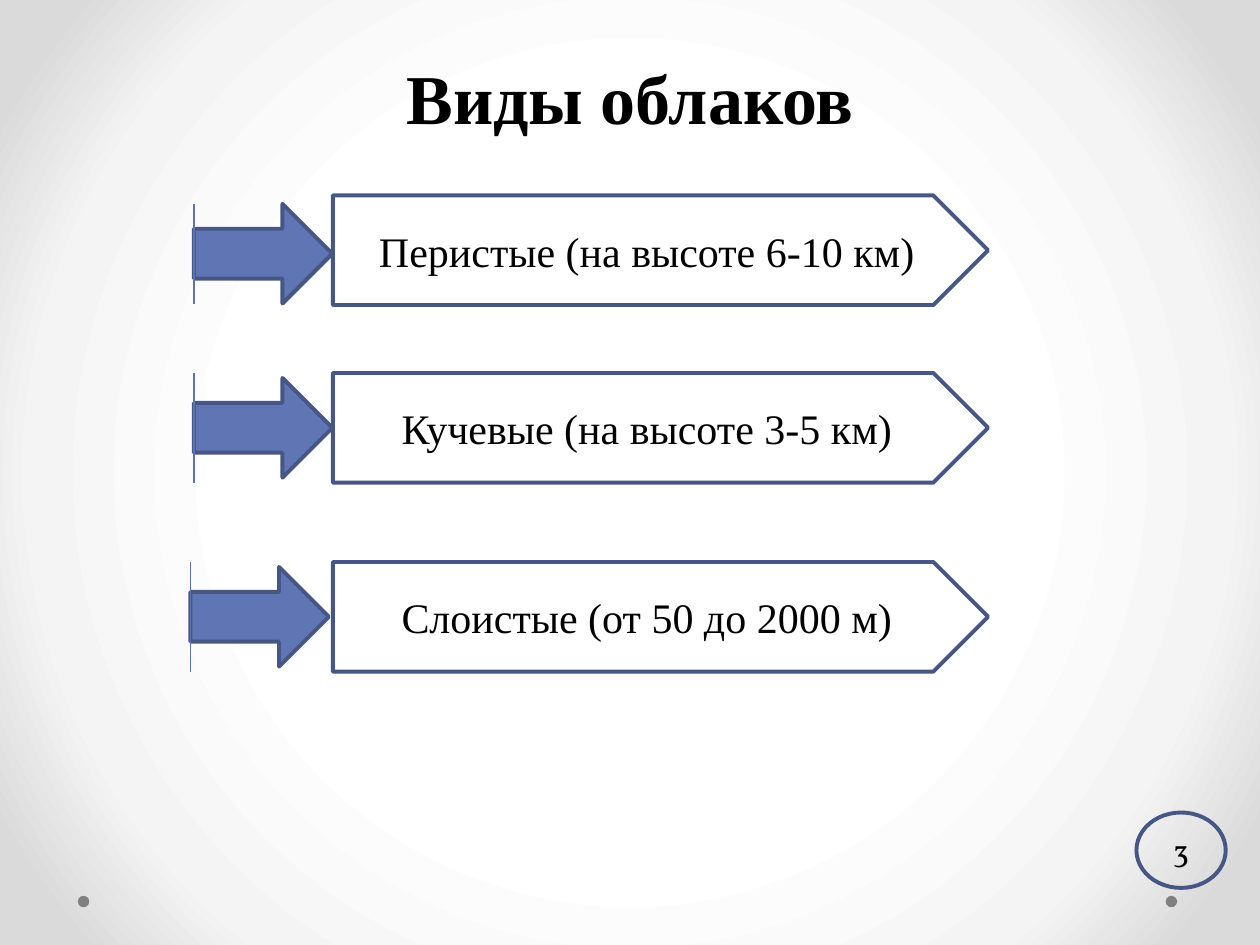
from lxml import etree
from pptx import Presentation
from pptx.dml.color import RGBColor
from pptx.enum.shapes import MSO_CONNECTOR, MSO_SHAPE
from pptx.enum.text import MSO_ANCHOR, PP_ALIGN
from pptx.oxml import parse_xml
from pptx.oxml.ns import nsdecls, qn
from pptx.util import Cm, Pt

BLACK = RGBColor(0x00, 0x00, 0x00)
GREY = RGBColor(0x80, 0x80, 0x80)
BLUE = RGBColor(0x60, 0x76, 0xB4)
OUTLINE = RGBColor(0x47, 0x57, 0x85)
RULE = RGBColor(0x5C, 0x72, 0xB2)
OVAL, ARROW, PENTAGON = MSO_SHAPE.OVAL, MSO_SHAPE.RIGHT_ARROW, MSO_SHAPE.PENTAGON
STRAIGHT = MSO_CONNECTOR.STRAIGHT
CENTER, MIDDLE, BOTTOM = PP_ALIGN.CENTER, MSO_ANCHOR.MIDDLE, MSO_ANCHOR.BOTTOM
SERIF = "Times New Roman"
STOPS = [(50, "FFFFFF"), (76, "F4F4F4"), (92, "DADADA")]
LABEL_LEFT, LABEL_WIDTH, LABEL_HEIGHT = 6.71, 13.21, 2.21
ARROW_WIDTH, ARROW_HEIGHT = 2.79, 2.01
CLOUDS = [
    ("Перистые (на высоте 6-10 км)", 3.91, 3.94, 0.17, 0.17, 2.01),
    ("Кучевые (на высоте 3-5 км)", 3.91, 7.52, 0.1, 0, LABEL_HEIGHT),
    ("Слоистые (от 50 до 2000 м)", 3.84, 11.33, 0.1, 0, LABEL_HEIGHT),
]


def paint_background(page):
    """Fill the page with a gradient that spreads from its centre."""
    page.background.fill.gradient()
    gradient = page.element.find(".//" + qn("a:gradFill"))
    stops = "".join(
        f'<a:gs pos="{place * 1000}"><a:srgbClr val="{colour}"/></a:gs>'
        for place, colour in STOPS
    )
    gradient.getparent().replace(gradient, parse_xml(
        f'<a:gradFill {nsdecls("a")} rotWithShape="1"><a:gsLst>{stops}</a:gsLst>'
        '<a:path path="circle"><a:fillToRect l="50000" t="50000" r="50000" b="50000"/>'
        "</a:path></a:gradFill>"))


def write(shape, text, size, font, anchor=MIDDLE):
    """Write one centred black paragraph in a shape and return it."""
    frame = shape.text_frame
    frame.word_wrap = True
    frame.vertical_anchor = anchor
    para = frame.paragraphs[0]
    para.text = text
    para.alignment = CENTER
    para.font.size = Pt(size)
    para.font.name = font
    para.font.color.rgb = BLACK
    return para


def add_preset(page, kind, left, top, width, height, fill=None, outline=OUTLINE):
    """Add a preset shape with an optional fill and outline."""
    shape = page.shapes.add_shape(kind, Cm(left), Cm(top), Cm(width), Cm(height))
    shape.shadow.inherit = False
    if fill is None:
        shape.fill.background()
    else:
        shape.fill.solid()
        shape.fill.fore_color.rgb = fill
    if outline is None:
        shape.line.fill.background()
    else:
        shape.line.color.rgb = outline
        shape.line.width = Pt(2.25)
    return shape


def add_title(page, text, left, top, width, height):
    """Place and format the title placeholder."""
    title = page.shapes.title
    title.left, title.top, title.width, title.height = map(Cm, (left, top, width, height))
    para = write(title, text, 40, SERIF, BOTTOM)
    para.font.bold = True
    para.line_spacing = Pt(58)


def add_rule(page, left, top, height):
    """Draw a thin vertical line."""
    rule = page.shapes.add_connector(STRAIGHT, Cm(left), Cm(top), Cm(left), Cm(top + height))
    rule.line.color.rgb = RULE
    rule.line.width = Pt(0.75)
    etree.SubElement(rule.element.spPr, qn("a:effectLst"))


def add_cloud_row(page, text, left, top, arrow_drop, rule_drop, rule_height):
    """Draw a cloud type: its label, the arrow to it and the rule behind the arrow."""
    label = add_preset(page, PENTAGON, LABEL_LEFT, top, LABEL_WIDTH, LABEL_HEIGHT)
    write(label, text, 24, SERIF)
    add_preset(page, ARROW, left, top + arrow_drop, ARROW_WIDTH, ARROW_HEIGHT, BLUE)
    add_rule(page, left, top + rule_drop, rule_height)


def add_footer(page, number, top):
    """Draw the two footer dots and the circled page number."""
    for left in (23.5, 1.57):
        add_preset(page, OVAL, left, top + 1.68, 0.23, 0.23, GREY, None)
    badge = add_preset(page, OVAL, 22.91, top, 1.8, 1.52)
    write(badge, number, 18, "Vollkorn")


def main():
    """Build and save the deck."""
    deck = Presentation()
    deck.slide_width, deck.slide_height = Cm(25.4), Cm(19.05)
    page = deck.slides.add_slide(deck.slide_layouts[5])
    paint_background(page)
    add_title(page, "Виды облаков", 1.27, 0, 22.86, 2.92)
    for cloud in CLOUDS:
        add_cloud_row(page, *cloud)
    add_footer(page, "3", 16.38)
    deck.save("out.pptx")


if __name__ == "__main__":
    main()
